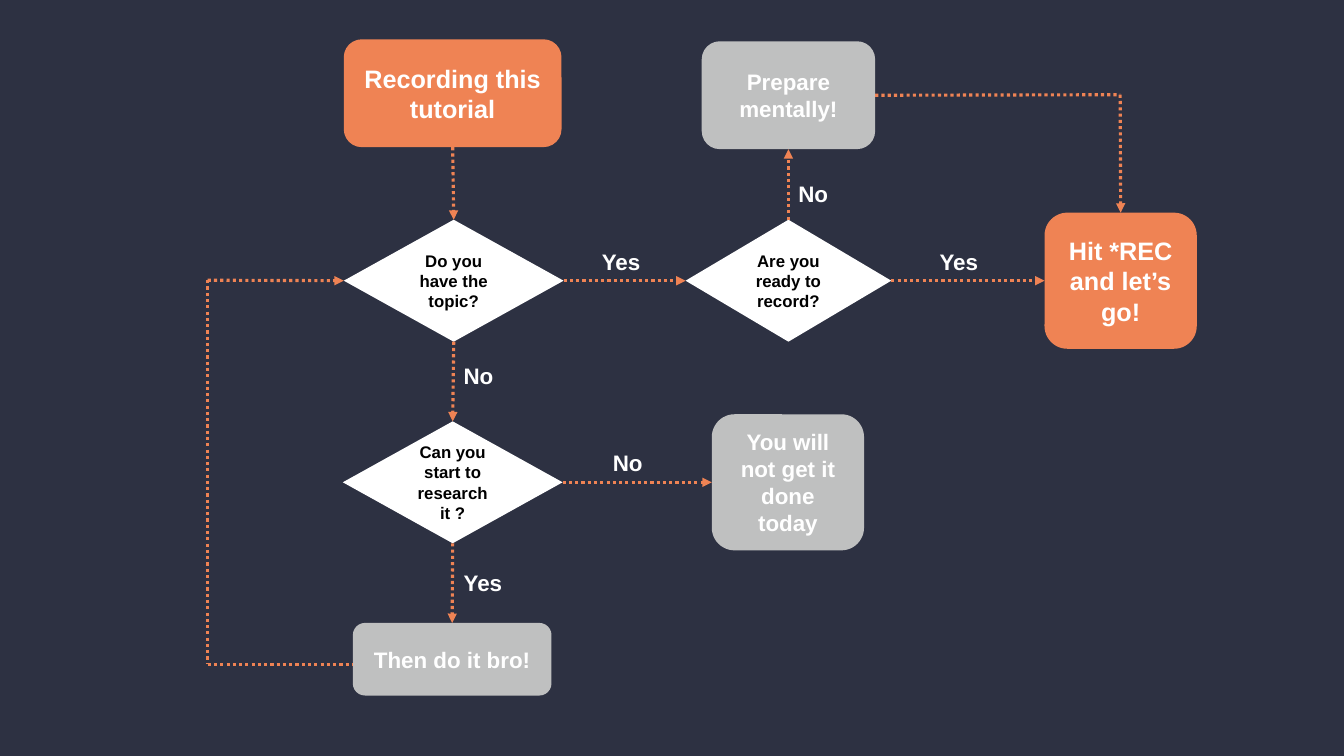
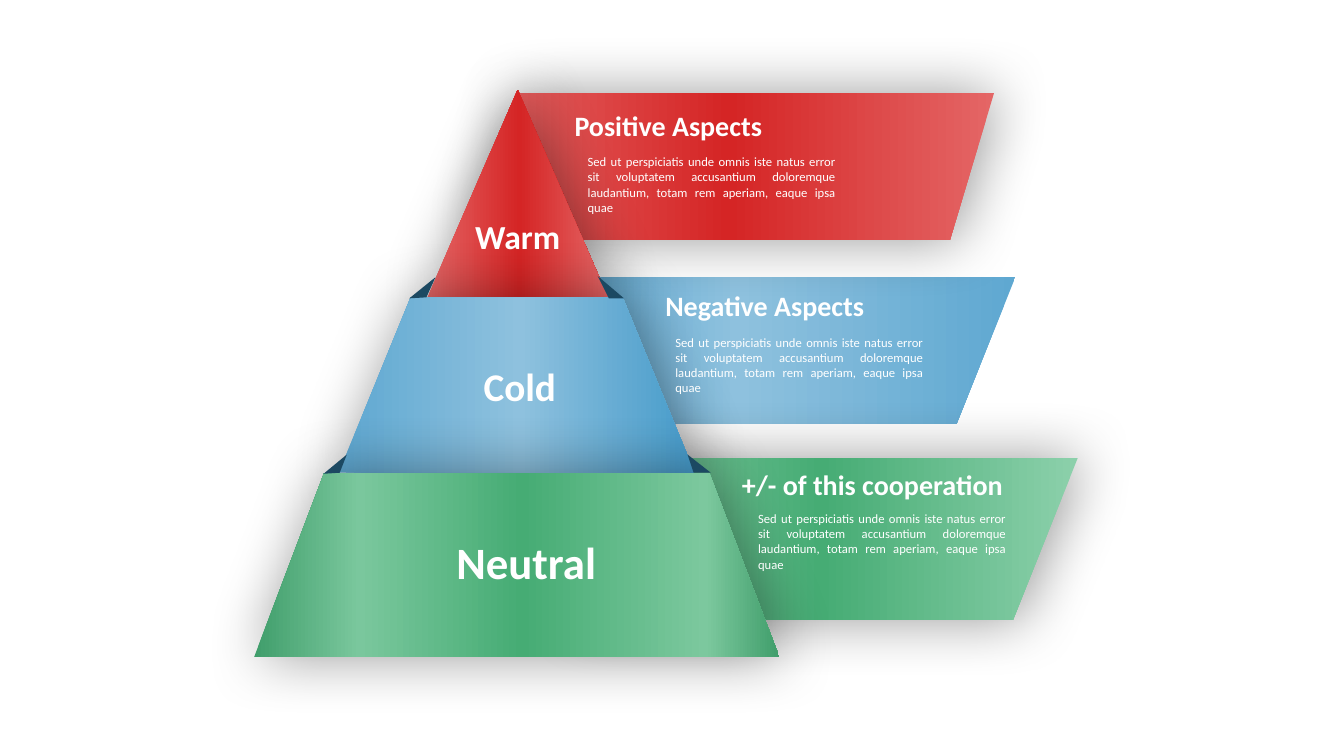
import lxml.etree
import pptx
import pptx.dml.color
import pptx.enum.dml
import pptx.enum.shapes
import pptx.enum.text
import pptx.oxml.ns
import pptx.util

Inches = pptx.util.Inches
Pt = pptx.util.Pt
RGBColor = pptx.dml.color.RGBColor
Preset = pptx.enum.shapes.MSO_SHAPE
Align = pptx.enum.text.PP_ALIGN
qn = pptx.oxml.ns.qn

NAVY = RGBColor(0x2D, 0x31, 0x42)
ORANGE = RGBColor(0xEF, 0x83, 0x54)
SILVER = RGBColor(0xBF, 0xC0, 0xC0)
WHITE = RGBColor(0xFF, 0xFF, 0xFF)
BLACK = RGBColor(0x00, 0x00, 0x00)
FOLD_BLUE = RGBColor(0x1C, 0x49, 0x62)
RED = RGBColor(0xD5, 0x25, 0x25)
LIGHT_RED = RGBColor(0xE4, 0x66, 0x66)
SKY = RGBColor(0x5F, 0xA8, 0xD1)
LIGHT_SKY = RGBColor(0x8E, 0xC1, 0xDE)
DEEP_SKY = RGBColor(0x46, 0x9B, 0xCA)
GREEN = RGBColor(0x46, 0xAC, 0x74)
LIGHT_GREEN = RGBColor(0x8C, 0xD0, 0xAB)
DARK_GREEN = RGBColor(0x40, 0x9E, 0x6B)
SOFT_GREEN = RGBColor(0x7A, 0xC7, 0x9D)
PALE_GREEN = RGBColor(0x7C, 0xC8, 0x9E)

RED_STOPS = [(0, LIGHT_RED), (51, RED), (100, LIGHT_RED)]
BLUE_STOPS = [(0, SKY), (51, LIGHT_SKY), (100, DEEP_SKY)]
GREEN_BAND_STOPS = [(0, LIGHT_GREEN), (51, GREEN), (100, LIGHT_GREEN)]
GREEN_TIER_STOPS = [(0, DARK_GREEN), (20, SOFT_GREEN), (51, GREEN),
                    (86, PALE_GREEN), (100, DARK_GREEN)]

FLOW_FONT = "Arial"
PYRAMID_FONT = "Calibri"
TOP, LEFT, BOTTOM, RIGHT = range(4)
BODY = ("Sed ut perspiciatis unde omnis iste natus error sit voluptatem accusantium "
        "doloremque laudantium, totam rem aperiam, eaque ipsa quae")


def add_slide(presentation, background):
    slide = presentation.slides.add_slide(presentation.slide_layouts[6])
    slide.background.fill.solid()
    slide.background.fill.fore_color.rgb = background
    return slide


def write_text(shape, text, font_name, size, color=WHITE, bold=True, align=Align.CENTER):
    text_frame = shape.text_frame
    text_frame.word_wrap = True
    text_frame.text = text
    paragraph = text_frame.paragraphs[0]
    paragraph.alignment = align
    font = paragraph.runs[0].font
    font.name = font_name
    font.size = Pt(size)
    font.bold = bold
    font.color.rgb = color


def add_text(slide, box, text, font_name, size, **style):
    shape = slide.shapes.add_textbox(*map(Inches, box))
    write_text(shape, text, font_name, size, **style)
    shape.text_frame.auto_size = pptx.enum.text.MSO_AUTO_SIZE.SHAPE_TO_FIT_TEXT


def add_preset(slide, preset, box):
    shape = slide.shapes.add_shape(preset, *map(Inches, box))
    shape.shadow.inherit = False
    shape.line.fill.background()
    return shape


def add_node(slide, preset, box, fill, text, size, color=WHITE):
    shape = add_preset(slide, preset, box)
    shape.fill.solid()
    shape.fill.fore_color.rgb = fill
    write_text(shape, text, FLOW_FONT, size, color)
    shape.text_frame.vertical_anchor = pptx.enum.text.MSO_ANCHOR.MIDDLE
    return shape


def add_decision(slide, box, text):
    return add_node(slide, Preset.DIAMOND, box, WHITE, text, 12, BLACK)


def add_step(slide, box, fill, text, size):
    return add_node(slide, Preset.ROUNDED_RECTANGLE, box, fill, text, size)


def add_dotted_line(slide, start, end, arrow=True):
    straight = pptx.enum.shapes.MSO_CONNECTOR.STRAIGHT
    points = [(0, 0) if hasattr(spot[0], "shape_id") else spot for spot in (start, end)]
    connector = slide.shapes.add_connector(straight, *map(Inches, points[0] + points[1]))
    if hasattr(start[0], "shape_id"):
        connector.begin_connect(*start)
    if hasattr(end[0], "shape_id"):
        connector.end_connect(*end)
    connector.line.color.rgb = ORANGE
    connector.line.width = Pt(2.25)
    connector.line.dash_style = pptx.enum.dml.MSO_LINE.ROUND_DOT
    properties = connector.element.spPr
    if arrow:
        lxml.etree.SubElement(properties.find(qn("a:ln")), qn("a:tailEnd"), type="triangle")
    lxml.etree.SubElement(properties, qn("a:effectLst"))


def set_gradient(shape, stops):
    shape.fill.gradient()
    shape.fill.gradient_angle = 0
    stop_list = shape.element.spPr.find(qn("a:gradFill")).find(qn("a:gsLst"))
    for stop in list(stop_list):
        stop_list.remove(stop)
    for position, color in stops:
        stop = lxml.etree.SubElement(stop_list, qn("a:gs"), pos=str(position * 1000))
        lxml.etree.SubElement(stop, qn("a:srgbClr"), val=str(color))


def set_soft_shadow(shape):
    effects = shape.element.spPr.find(qn("a:effectLst"))
    shadow = lxml.etree.SubElement(effects, qn("a:outerShdw"), blurRad=str(Pt(43)),
                                   dist=str(Pt(3)), dir="0", algn="ctr", rotWithShape="0")
    color = lxml.etree.SubElement(shadow, qn("a:srgbClr"), val=str(BLACK))
    lxml.etree.SubElement(color, qn("a:alpha"), val="40000")


def add_gradient_shape(slide, preset, box, slant, stops, shadow=True):
    shape = add_preset(slide, preset, box)
    shape.adjustments[0] = slant
    set_gradient(shape, stops)
    if shadow:
        set_soft_shadow(shape)
    return shape


def add_band(slide, box, slant, stops, shadow=True):
    shape = add_gradient_shape(slide, Preset.PARALLELOGRAM, box, slant, stops, shadow)
    shape.rotation = 180


def add_tier(slide, box, slant, stops):
    add_gradient_shape(slide, Preset.TRAPEZOID, box, slant, stops)


def add_fold(slide, corners):
    first, *others = [tuple(map(Inches, corner)) for corner in corners]
    builder = slide.shapes.build_freeform(*first)
    builder.add_line_segments(others, close=True)
    shape = builder.convert_to_shape()
    shape.shadow.inherit = False
    shape.fill.solid()
    shape.fill.fore_color.rgb = FOLD_BLUE
    shape.line.fill.background()


def build_flowchart(presentation):
    slide = add_slide(presentation, NAVY)
    start = add_step(slide, (3.41, 0.39, 2.16, 1.07), ORANGE, "Recording this tutorial", 18)
    topic = add_decision(slide, (3.41, 2.18, 2.18, 1.21), "Do you have the topic?")
    ready = add_decision(slide, (6.8, 2.18, 2.04, 1.21), "Are you ready to record?")
    research = add_decision(slide, (3.4, 4.18, 2.18, 1.21), "Can you start to research it ?")
    do_it = add_step(slide, (3.5, 6.18, 1.97, 0.72), SILVER, "Then do it bro!", 16)
    not_today = add_step(slide, (7.06, 4.11, 1.51, 1.35), SILVER,
                         "You will not get it done today", 16)
    record = add_step(slide, (10.36, 2.11, 1.51, 1.35), ORANGE, "Hit *REC and let’s go!", 18)
    prepare = add_step(slide, (6.96, 0.41, 1.72, 1.07), SILVER, "Prepare mentally!", 16)

    for origin, target in [
        ((start, BOTTOM), (topic, TOP)),
        ((topic, BOTTOM), (research, TOP)),
        ((topic, RIGHT), (ready, LEFT)),
        ((research, BOTTOM), (do_it, TOP)),
        ((research, RIGHT), (not_today, LEFT)),
        ((ready, RIGHT), (record, LEFT)),
        ((ready, TOP), (prepare, BOTTOM)),
    ]:
        add_dotted_line(slide, origin, target)

    record_corner = (11.11, 0.94)
    add_dotted_line(slide, (prepare, RIGHT), record_corner, arrow=False)
    add_dotted_line(slide, record_corner, (record, TOP))

    loop_bottom, loop_top = (2.06, 6.59), (2.06, 2.78)
    add_dotted_line(slide, loop_bottom, (3.5, 6.59), arrow=False)
    add_dotted_line(slide, loop_top, loop_bottom, arrow=False)
    add_dotted_line(slide, loop_top, (topic, LEFT))

    for left, top, answer in [
        (5.87, 2.41, "Yes"), (4.5, 3.54, "No"), (4.5, 5.6, "Yes"),
        (5.98, 4.41, "No"), (9.22, 2.41, "Yes"), (7.82, 1.74, "No"),
    ]:
        add_text(slide, (left, top, 0.62, 0.37), answer, FLOW_FONT, 16, align=Align.LEFT)


def build_pyramid(presentation):
    slide = add_slide(presentation, WHITE)
    add_band(slide, (4.67, 2.75, 5.4, 1.46), 0.4, BLUE_STOPS, shadow=False)
    add_band(slide, (4.7, 0.92, 5.16, 1.46), 0.3, RED_STOPS)
    add_tier(slide, (4.23, 0.89, 1.81, 2.08), 0.5, RED_STOPS)
    add_band(slide, (5.7, 4.54, 4.99, 1.61), 0.4, GREEN_BAND_STOPS)
    add_tier(slide, (3.36, 2.95, 3.53, 1.74), 0.41, BLUE_STOPS)
    add_tier(slide, (2.52, 4.69, 5.21, 1.83), 0.38, GREEN_TIER_STOPS)

    for corners in [
        [(6.88, 4.69), (6.82, 4.51), (7.05, 4.69)],
        [(6.04, 2.96), (5.93, 2.74), (6.19, 2.96)],
        [(4.23, 2.95), (4.32, 2.75), (4.06, 2.96)],
        [(3.37, 4.69), (3.44, 4.51), (3.21, 4.7)],
    ]:
        add_fold(slide, corners)

    for box, text, size in [
        ((4.38, 2.09, 1.51, 0.5), "Warm", 24),
        ((4.4, 3.55, 1.51, 0.57), "Cold", 28),
        ((4.04, 5.26, 2.36, 0.64), "Neutral", 32),
    ]:
        add_text(slide, box, text, PYRAMID_FONT, size)

    for title, title_left, title_top, body_left, body_top in [
        ("Positive Aspects", 5.6, 1.03, 5.73, 1.48),
        ("Negative Aspects", 6.5, 2.81, 6.6, 3.27),
        ("+/- of this cooperation", 7.26, 4.59, 7.42, 5.02),
    ]:
        add_text(slide, (title_left, title_top, 3.36, 0.44), title, PYRAMID_FONT, 20,
                 align=Align.LEFT)
        add_text(slide, (body_left, body_top, 2.65, 0.71), BODY, PYRAMID_FONT, 9,
                 bold=False, align=Align.JUSTIFY)


def main():
    presentation = pptx.Presentation()
    presentation.slide_width = Inches(13.33)
    presentation.slide_height = Inches(7.5)
    build_flowchart(presentation)
    build_pyramid(presentation)
    presentation.save("out.pptx")


if __name__ == "__main__":
    main()
